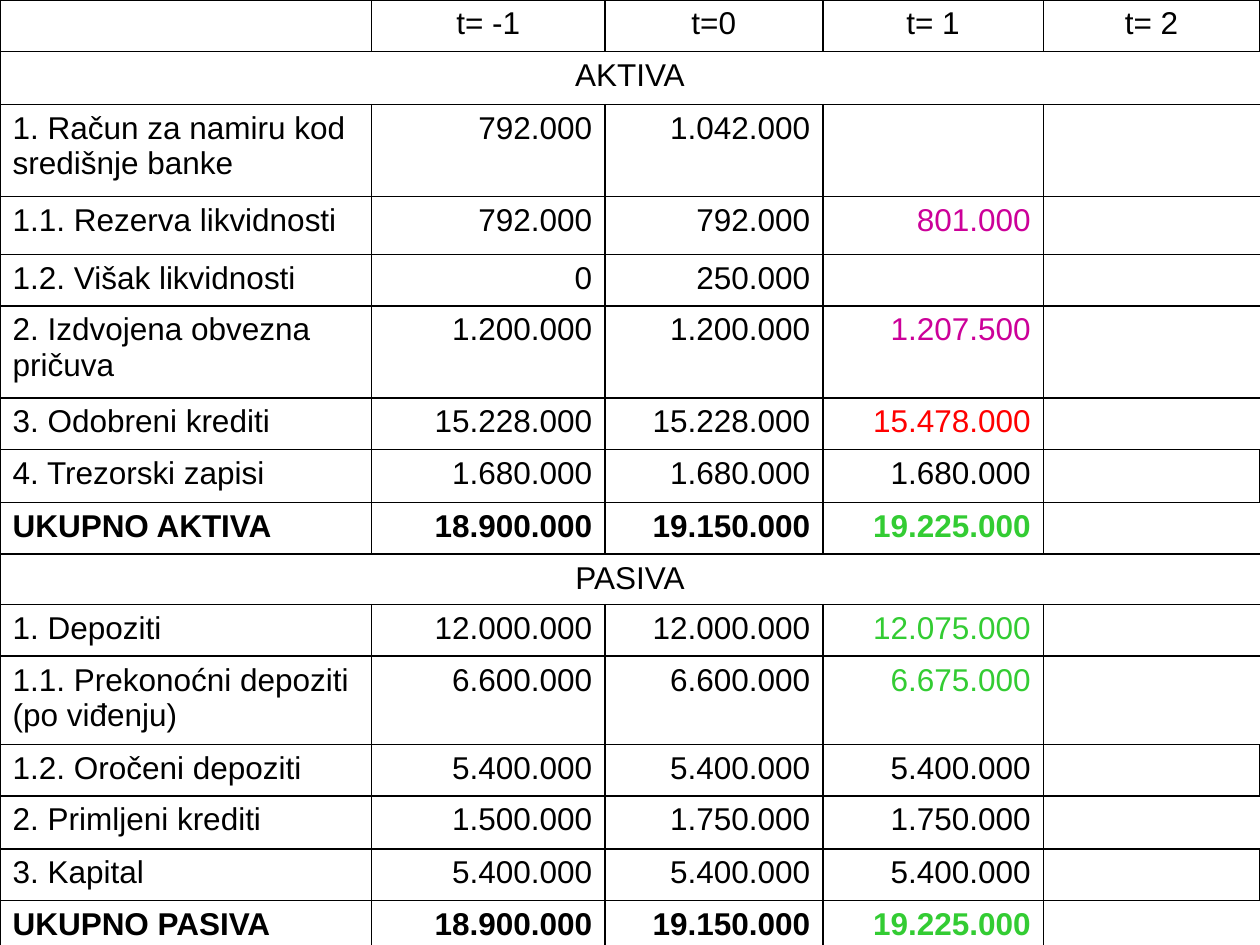
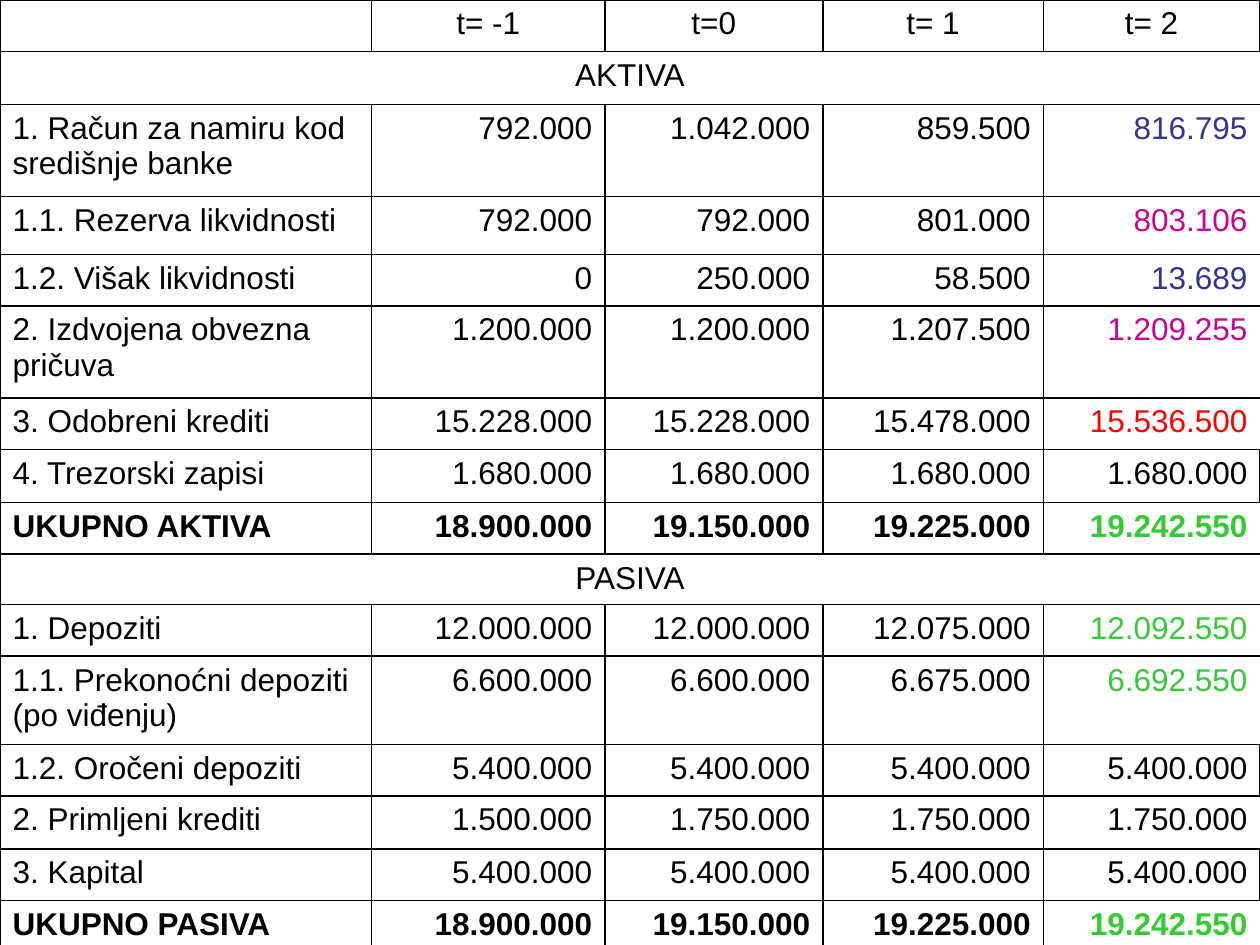
from dataclasses import dataclass

from lxml import etree
from pptx import Presentation
from pptx.dml.color import RGBColor
from pptx.enum.text import MSO_ANCHOR, PP_ALIGN
from pptx.oxml.ns import qn
from pptx.util import Inches, Pt

LEFT, MID, RIGHT = PP_ALIGN.LEFT, PP_ALIGN.CENTER, PP_ALIGN.RIGHT
TOP = MSO_ANCHOR.TOP


@dataclass(frozen=True)
class Theme:
    font: str = "Arial"
    size: int = 18
    ink: str = "000000"
    paper: str = "FFFFFF"
    pink: str = "CC0099"
    red: str = "FF0000"
    green: str = "33CC33"
    blue: str = "333399"
    line: float = 1
    pad_x: float = 0.1
    pad_y: float = 0.05


T = Theme()
WIDTHS = [2.95, 1.85, 1.73, 1.75, 1.72]
HEAD = ["", "t= -1", "t=0", "t= 1", "t= 2"]

# Row height, colour of the newest value, label, values by period
ASSETS = [
    (0.73, T.blue, "1. Račun za namiru kod središnje banke",
     ["792.000", "1.042.000", "859.500", "816.795"]),
    (0.46, T.pink, "1.1. Rezerva likvidnosti",
     ["792.000", "792.000", "801.000", "803.106"]),
    (0.41, T.blue, "1.2. Višak likvidnosti",
     ["0", "250.000", "58.500", "13.689"]),
    (0.73, T.pink, "2. Izdvojena obvezna pričuva",
     ["1.200.000", "1.200.000", "1.207.500", "1.209.255"]),
    (0.41, T.red, "3. Odobreni krediti",
     ["15.228.000", "15.228.000", "15.478.000", "15.536.500"]),
    (0.42, T.ink, "4. Trezorski zapisi", ["1.680.000"] * 4),
]
DEBTS = [
    (0.41, T.green, "1. Depoziti",
     ["12.000.000", "12.000.000", "12.075.000", "12.092.550"]),
    (0.70, T.green, "1.1. Prekonoćni depoziti (po viđenju)",
     ["6.600.000", "6.600.000", "6.675.000", "6.692.550"]),
    (0.41, T.ink, "1.2. Oročeni depoziti", ["5.400.000"] * 4),
    (0.42, T.ink, "2. Primljeni krediti",
     ["1.500.000", "1.750.000", "1.750.000", "1.750.000"]),
    (0.41, T.ink, "3. Kapital", ["5.400.000"] * 4),
]
TOTALS = ["18.900.000", "19.150.000", "19.225.000", "19.242.550"]
PARTS = [("AKTIVA", 0.42, ASSETS), ("PASIVA", 0.40, DEBTS)]

# Rows that have a line at the right edge of the slide
CLOSED = {"4. Trezorski zapisi", "1.2. Oročeni depoziti", "3. Kapital"}


def draw_edges(cell, closed):
    """Rule the cell on all sides, or leave its right side open."""
    props = cell._tc.get_or_add_tcPr()
    for side in ("lnL", "lnR", "lnT", "lnB"):
        edge = etree.SubElement(props, qn(f"a:{side}"), w=str(Pt(T.line)))
        if side == "lnR" and not closed:
            etree.SubElement(edge, qn("a:noFill"))
        else:
            fill = etree.SubElement(edge, qn("a:solidFill"))
            etree.SubElement(fill, qn("a:srgbClr"), val=T.ink)


def fill_cell(cell, text, align, color=T.ink, bold=False, closed=True):
    draw_edges(cell, closed)
    cell.fill.solid()
    cell.fill.fore_color.rgb = RGBColor.from_string(T.paper)
    cell.margin_left = cell.margin_right = Inches(T.pad_x)
    cell.margin_top = cell.margin_bottom = Inches(T.pad_y)
    cell.vertical_anchor = TOP
    para = cell.text_frame.paragraphs[0]
    para.alignment = align
    para.font.size = Pt(T.size)
    if text:
        run = para.add_run()
        run.text = text
        font = run.font
        font.name, font.size, font.bold = T.font, Pt(T.size), bold
        font.color.rgb = RGBColor.from_string(color)


def fill_head(row):
    for cell, text in zip(row.cells, HEAD):
        fill_cell(cell, text, MID)


def fill_band(row, name):
    cells = list(row.cells)
    cells[0].merge(cells[-1])
    for cell in cells:
        fill_cell(cell, name if cell is cells[0] else "", MID, closed=False)


def fill_line(row, label, values, mark, last, bold=False):
    """Show values up to period `last`, with the newest one marked."""
    cells = list(row.cells)
    fill_cell(cells[0], label, LEFT, bold=bold)
    for i, (cell, value) in enumerate(zip(cells[1:], values)):
        # Blue amounts stay open until the final step
        due = i == last < len(values) - 1 and mark == T.blue
        text = "" if i > last or due else value
        closed = cell is not cells[-1] or label in CLOSED
        fill_cell(cell, text, RIGHT, mark if i == last else T.ink, bold, closed)


def add_sheet(deck, last):
    """Add a slide with the balance sheet up to period `last`."""
    slide = deck.slides.add_slide(deck.slide_layouts[6])
    heights = [0.41]
    for _, band, lines in PARTS:
        heights += [band] + [line[0] for line in lines] + [0.41]
    frame = slide.shapes.add_table(
        len(heights), len(WIDTHS), 0, 0,
        Inches(sum(WIDTHS)), Inches(sum(heights)))
    table = frame.table
    table.first_row = table.horz_banding = False
    for col, width in zip(table.columns, WIDTHS):
        col.width = Inches(width)
    for row, height in zip(table.rows, heights):
        row.height = Inches(height)

    rows = iter(table.rows)
    fill_head(next(rows))
    for name, _, lines in PARTS:
        fill_band(next(rows), name)
        for _, mark, label, values in lines:
            fill_line(next(rows), label, values, mark, last)
        fill_line(next(rows), f"UKUPNO {name}", TOTALS, T.green, last, True)


def main():
    deck = Presentation()
    deck.slide_width, deck.slide_height = Inches(10), Inches(7.5)
    for last in (2, 3):
        add_sheet(deck, last)
    deck.save("out.pptx")


if __name__ == "__main__":
    main()
